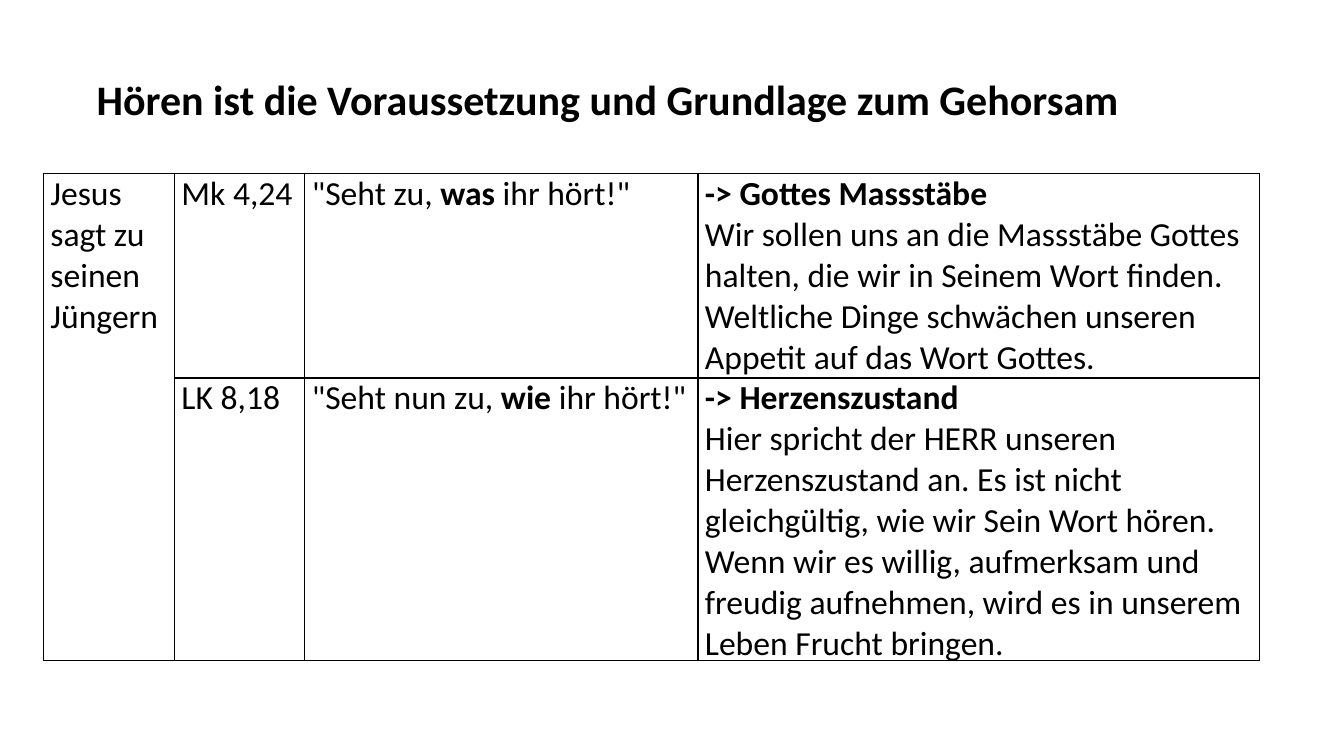
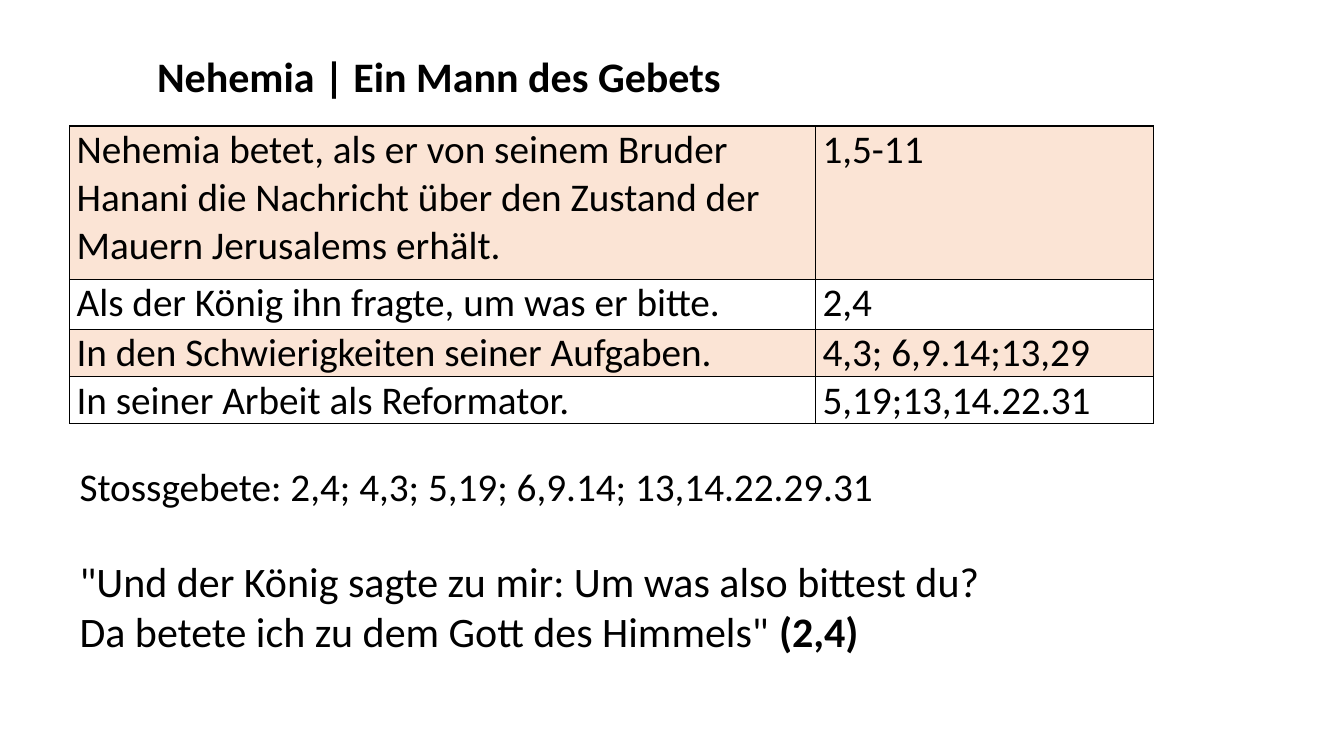
from lxml import etree
from pptx import Presentation
from pptx.dml.color import RGBColor
from pptx.enum.text import MSO_AUTO_SIZE
from pptx.oxml.ns import qn
from pptx.util import Inches, Pt

GROW = MSO_AUTO_SIZE.SHAPE_TO_FIT_TEXT
WIDTH, HEIGHT = Inches(13.33), Inches(7.5)
FONT = "Calibri"
COLORS = {"ink": "000000", "band": "FBE4D5"}
CELL_INSET = Inches(0.07)
TITLE_SIZE, TITLE_HEIGHT = 30, 8.27
LEFT = 5.18

LISTENING = [
    ["Jesus sagt zu seinen Jüngern", "Mk 4,24", "\"Seht zu, **was** ihr hört!\"",
     "**-> Gottes Massstäbe**\n"
     "Wir sollen uns an die Massstäbe Gottes halten, die wir in Seinem Wort finden.\n"
     "Weltliche Dinge schwächen unseren Appetit auf das Wort Gottes."],
    ["", "LK 8,18", "\"Seht nun zu, **wie** ihr hört!\"",
     "**-> Herzenszustand**\n"
     "Hier spricht der HERR unseren Herzenszustand an. Es ist nicht gleichgültig, "
     "wie wir Sein Wort hören. Wenn wir es willig, aufmerksam und freudig aufnehmen, "
     "wird es in unserem Leben Frucht bringen."],
]
PRAYERS = [
    ["Nehemia betet, als er von seinem Bruder Hanani die Nachricht über den Zustand "
     "der Mauern Jerusalems erhält.", "1,5-11"],
    ["Als der König ihn fragte, um was er bitte.", "2,4"],
    ["In den Schwierigkeiten seiner Aufgaben.", "4,3; 6,9.14;13,29"],
    ["In seiner Arbeit als Reformator.", "5,19;13,14.22.31"],
]


def across(percent):
    """Return a share of the slide's width."""
    return round(WIDTH * percent / 100)


def down(percent):
    """Return a share of the slide's height."""
    return round(HEIGHT * percent / 100)


def write(frame, text, size, color="ink", spacing=None, before=None):
    """Write lines as paragraphs, with ** switching bold on and off."""
    for number, line in enumerate(text.split("\n")):
        para = frame.add_paragraph() if number else frame.paragraphs[0]
        if spacing:
            para.line_spacing = spacing
        if before:
            para.space_before = Pt(before)
        for index, part in enumerate(line.split("**")):
            if part:
                span = para.add_run()
                span.text = part
                span.font.name = FONT
                span.font.size = Pt(size)
                span.font.bold = index % 2 == 1
                span.font.color.rgb = RGBColor.from_string(COLORS[color])


def add_text(page, text, left, top, width, height, **style):
    """Add a wrapped text box that grows with its text."""
    box = page.shapes.add_textbox(across(left), down(top), across(width), down(height))
    box.text_frame.word_wrap = True
    box.text_frame.auto_size = GROW
    write(box.text_frame, text, **style)


def add_title(page, text, left, top, width):
    """Add a slide title in the shared style."""
    add_text(page, f"**{text}**", left, top, width, TITLE_HEIGHT,
             size=TITLE_SIZE, spacing=1.07, before=12)


def add_borders(cell):
    """Draw a thin line on each side of a cell."""
    properties = cell._tc.get_or_add_tcPr()
    for side in ("lnL", "lnR", "lnT", "lnB"):
        line = etree.SubElement(properties, qn(f"a:{side}"), w=str(Pt(1)))
        fill = etree.SubElement(line, qn("a:solidFill"))
        etree.SubElement(fill, qn("a:srgbClr"), val=COLORS["ink"])


def add_grid(page, content, left, top, columns, rows, size, banded=False):
    """Add a bordered table, with every other row tinted if banded."""
    table = page.shapes.add_table(len(rows), len(columns), across(left), down(top),
                                  across(sum(columns)), down(sum(rows))).table
    table.first_row = table.horz_banding = False
    for column, width in zip(table.columns, columns):
        column.width = across(width)
    for number, (row, height, texts) in enumerate(zip(table.rows, rows, content)):
        row.height = down(height)
        for cell, text in zip(row.cells, texts):
            cell.margin_left = cell.margin_right = CELL_INSET
            cell.margin_top = cell.margin_bottom = 0
            add_borders(cell)
            if banded and number % 2 == 0:
                cell.fill.solid()
                cell.fill.fore_color.rgb = RGBColor.from_string(COLORS["band"])
            else:
                cell.fill.background()
            write(cell.text_frame, text, size)
    return table


def build_listening(page):
    """Build the slide on listening and obedience."""
    add_title(page, "Hören ist die Voraussetzung und Grundlage zum Gehorsam", 6.45, 8.67, 80.1)
    table = add_grid(page, LISTENING, 3.23, 22.93, columns=[9.75, 9.7, 29.25, 41.78],
                     rows=[27.07, 32.4], size=24)
    table.cell(0, 0).merge(table.cell(1, 0))


def build_prayers(page):
    """Build the slide on Nehemiah's prayers."""
    add_title(page, "Nehemia | Ein Mann des Gebets", 10.95, 5.6, 46.35)
    add_grid(page, PRAYERS, LEFT, 16.67, columns=[55.5, 25.13],
             rows=[20.27, 6.67, 5.07, 5.07], size=28, banded=True)
    add_text(page, "Stossgebete: 2,4; 4,3; 5,19; 6,9.14; 13,14.22.29.31",
             LEFT, 60.53, 61.65, 7.6, size=28)
    add_text(page, "\"Und der König sagte zu mir: Um was also bittest du? "
             "Da betete ich zu dem Gott des Himmels\" **(2,4)**",
             LEFT, 72.8, 69.6, 14.8, size=30)


def main():
    """Build and save the deck."""
    deck = Presentation()
    deck.slide_width, deck.slide_height = WIDTH, HEIGHT
    for build in (build_listening, build_prayers):
        build(deck.slides.add_slide(deck.slide_layouts[6]))
    deck.save("out.pptx")


if __name__ == "__main__":
    main()
